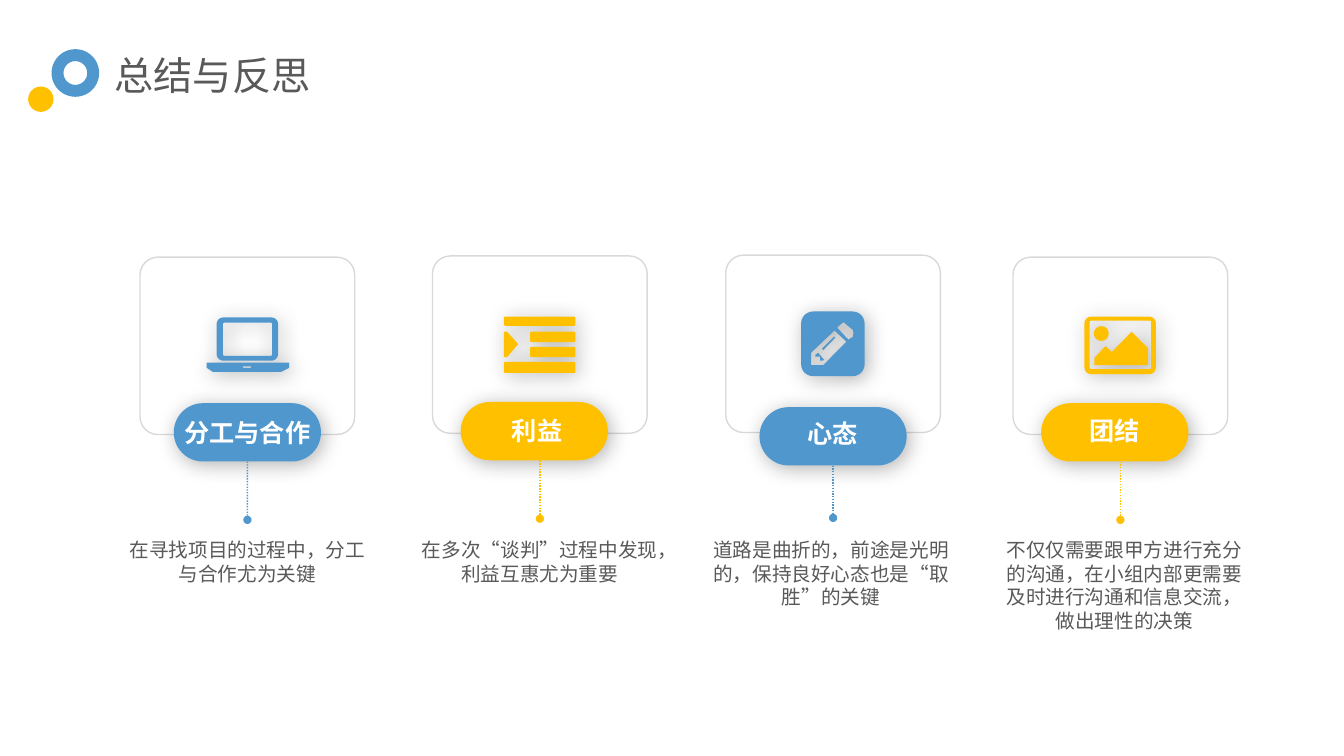
"""Build the summary and reflection slide with four linked cards."""
import math
from dataclasses import dataclass
from typing import Optional

from lxml import etree
from pptx import Presentation
from pptx import util as u
from pptx.dml.color import RGBColor
from pptx.enum import dml, shapes, text
from pptx.oxml.ns import qn

Point = tuple[float, float]
Contour = list[Point]

FONT = "Noto Sans CJK SC"
COLORS = {"blue": "4F97CD", "gold": "FFC000", "ink": "595959",
          "edge": "D9D9D9", "white": "FFFFFF", "shadow": "000000"}
CARD_W, CARD_H = 5.41, 4.47
PILL_W, PILL_H = 3.71, 1.47
STEM_END = 6.62
NOTE_TOP, NOTE_W = 13.44, 6.63


@dataclass
class Topic:
    color: str
    card: Point
    pill_top: float
    pill_shift: float
    label: str
    label_at: Optional[Point]
    icon_at: Point
    icon: list[Contour]
    note: str
    note_left: float
    note_lines: int


def rounded(left: float, top: float, right: float, bottom: float, radius: float) -> Contour:
    centres = [(right - radius, bottom - radius), (left + radius, bottom - radius),
               (left + radius, top + radius), (right - radius, top + radius)]
    return [(x + radius * math.cos(math.radians(90 * corner + step)),
             y + radius * math.sin(math.radians(90 * corner + step)))
            for corner, (x, y) in enumerate(centres) for step in range(0, 91, 15)]


LAPTOP = [
    [(0, 1.14), (2.08, 1.14), (2.08, 1.27), (1.88, 1.37), (0.15, 1.37), (0, 1.27)],
    rounded(0.25, 0, 1.8, 1.09, 0.17),
    rounded(0.41, 0.13, 1.65, 0.97, 0.04),
    rounded(0.91, 1.23, 1.12, 1.27, 0.02),
]
INDENT = [
    rounded(0, 0, 1.8, 0.23, 0.04),
    rounded(0, 1.14, 1.8, 1.42, 0.04),
    rounded(0.66, 0.38, 1.8, 0.64, 0.04),
    rounded(0.66, 0.76, 1.8, 1.02, 0.04),
    [(0, 0.38), (0.08, 0.38), (0.36, 0.69), (0.08, 1.02), (0, 1.02)],
]
PENCIL = [
    rounded(0, 0, 1.6, 1.63, 0.3),
    [(1.14, 0.76), (0.84, 0.48), (0.25, 1.04), (0.25, 1.35), (0.56, 1.35)],
    [(0.58, 1.22), (0.53, 1.24), (0.48, 1.24), (0.48, 1.14), (0.36, 1.14),
     (0.36, 1.09), (0.43, 1.04)],
    [(0.86, 0.66), (0.56, 0.97), (0.52, 0.94), (0.83, 0.63)],
    [(1.3, 0.64), (1.32, 0.55), (1.3, 0.46), (1.14, 0.33), (1.07, 0.27),
     (0.99, 0.33), (0.91, 0.41), (1.19, 0.71)],
]
LANDSCAPE = [
    rounded(0, 0, 1.8, 1.45, 0.17),
    rounded(0.13, 0.1, 1.68, 1.32, 0.04),
    rounded(0.24, 0.24, 0.61, 0.61, 0.18),
    [(1.6, 1.22), (0.25, 1.22), (0.25, 1.04), (0.53, 0.74), (0.69, 0.89),
     (1.19, 0.38), (1.6, 0.79)],
]

TOPICS = [
    Topic("blue", (3.53, 6.48), 10.16, 0, "分工与合作", None, (5.21, 8), LAPTOP,
          "在寻找项目的过程中，分工与合作尤为关键", 2.92, 2),
    Topic("gold", (10.9, 6.45), 10.13, -0.14, "利益", (11.68, 10.34), (12.7, 7.98), INDENT,
          "在多次“谈判”过程中发现，利益互惠尤为重要", 10.29, 2),
    Topic("blue", (18.29, 6.43), 10.26, 0, "心态", (19.13, 10.41), (20.19, 7.85), PENCIL,
          "道路是曲折的，前途是光明的，保持良好心态也是“取胜”的关键", 17.63, 3),
    Topic("gold", (25.53, 6.48), 10.16, -0.14, "团结", (26.24, 10.34), (27.33, 7.98), LANDSCAPE,
          "不仅仅需要跟甲方进行充分的沟通，在小组内部更需要及时进行沟通和信息交流，做出理性的决策",
          25.02, 4),
]


def rgb(name: str) -> RGBColor:
    return RGBColor.from_string(COLORS[name])


def paint(shape, fill: str) -> None:
    shape.shadow.inherit = False
    shape.fill.solid()
    shape.fill.fore_color.rgb = rgb(fill)
    shape.line.fill.background()


def cast_shadow(shape) -> None:
    effects = shape._element.spPr.find(qn("a:effectLst"))
    outer = etree.SubElement(effects, qn("a:outerShdw"), blurRad=str(u.Pt(15)),
                             dist=str(u.Pt(3)), dir="2700000", algn="tl", rotWithShape="0")
    tint = etree.SubElement(outer, qn("a:srgbClr"), val=COLORS["shadow"])
    etree.SubElement(tint, qn("a:alpha"), val="30000")


def add_preset(page, kind, left: float, top: float, width: float, height: float, fill: str):
    shape = page.shapes.add_shape(kind, u.Cm(left), u.Cm(top), u.Cm(width), u.Cm(height))
    paint(shape, fill)
    return shape


def write(frame, words: str, size: int, color: str, align, bold: bool = False) -> None:
    para = frame.paragraphs[0]
    para.text = words
    para.alignment = align
    para.font.size = u.Pt(size)
    para.font.name = FONT
    para.font.bold = bold
    para.font.color.rgb = rgb(color)
    etree.SubElement(para._p.get_or_add_pPr().get_or_add_defRPr(), qn("a:ea"), typeface=FONT)


def add_text(page, left: float, top: float, width: float, height: float, words: str,
             size: int, color: str, align=text.PP_ALIGN.CENTER, bold: bool = False) -> None:
    box = page.shapes.add_textbox(u.Cm(left), u.Cm(top), u.Cm(width), u.Cm(height))
    box.text_frame.word_wrap = True
    write(box.text_frame, words, size, color, align, bold)


def add_icon(page, origin: Point, contours: list[Contour], fill: str) -> None:
    placed = [[(u.Cm(origin[0] + x), u.Cm(origin[1] + y)) for x, y in contour]
              for contour in contours]
    builder = page.shapes.build_freeform(*placed[0][0])
    for contour in placed:
        builder.move_to(*contour[0])
        builder.add_line_segments(contour[1:], close=True)
    icon = builder.convert_to_shape()
    paint(icon, fill)
    cast_shadow(icon)


def add_stem(page, pill, x: float, start: float, end: float, color: str, joined: bool) -> None:
    stem = page.shapes.add_connector(shapes.MSO_CONNECTOR.STRAIGHT,
                                     u.Cm(x), u.Cm(start), u.Cm(x), u.Cm(end))
    if joined:
        stem.begin_connect(pill, 2)
    stem.line.color.rgb = rgb(color)
    stem.line.width = u.Pt(1)
    stem.line.dash_style = dml.MSO_LINE.ROUND_DOT
    properties = stem._element.spPr
    etree.SubElement(properties.find(qn("a:ln")), qn("a:tailEnd"), type="oval")
    etree.SubElement(properties, qn("a:effectLst"))


def add_topic(page, topic: Topic) -> None:
    left, top = topic.card
    centre = left + CARD_W / 2
    card = add_preset(page, shapes.MSO_SHAPE.ROUNDED_RECTANGLE, left, top, CARD_W, CARD_H, "white")
    card.adjustments[0] = 0.1
    card.fill.background()
    card.line.color.rgb = rgb("edge")
    card.line.width = u.Pt(1)
    pill = add_preset(page, shapes.MSO_SHAPE.ROUNDED_RECTANGLE,
                      centre - PILL_W / 2 + topic.pill_shift, topic.pill_top,
                      PILL_W, PILL_H, topic.color)
    pill.adjustments[0] = 0.5
    cast_shadow(pill)
    add_stem(page, pill, centre, topic.pill_top + PILL_H, top + STEM_END,
             topic.color, topic.pill_shift == 0)
    add_icon(page, topic.icon_at, topic.icon, topic.color)
    if topic.label_at:
        add_text(page, *topic.label_at, PILL_W, 1.12, topic.label, 18, "white", bold=True)
    else:
        pill.text_frame.word_wrap = False
        pill.text_frame.vertical_anchor = text.MSO_ANCHOR.MIDDLE
        write(pill.text_frame, topic.label, 18, "white", text.PP_ALIGN.CENTER, True)
    add_text(page, topic.note_left, NOTE_TOP, NOTE_W, 0.23 + 0.71 * topic.note_lines,
             topic.note, 14, "ink")


def main() -> None:
    deck = Presentation()
    deck.slide_width, deck.slide_height = u.Cm(33.87), u.Cm(19.05)
    page = deck.slides.add_slide(deck.slide_layouts[6])
    add_preset(page, shapes.MSO_SHAPE.DONUT, 1.3, 1.24, 1.2, 1.2, "blue")
    add_preset(page, shapes.MSO_SHAPE.OVAL, 0.71, 2.18, 0.64, 0.64, "gold")
    add_text(page, 2.64, 1.16, 7.14, 1.45, "总结与反思", 28, "ink", text.PP_ALIGN.LEFT)
    for topic in TOPICS:
        add_topic(page, topic)
    deck.save("out.pptx")


if __name__ == "__main__":
    main()
